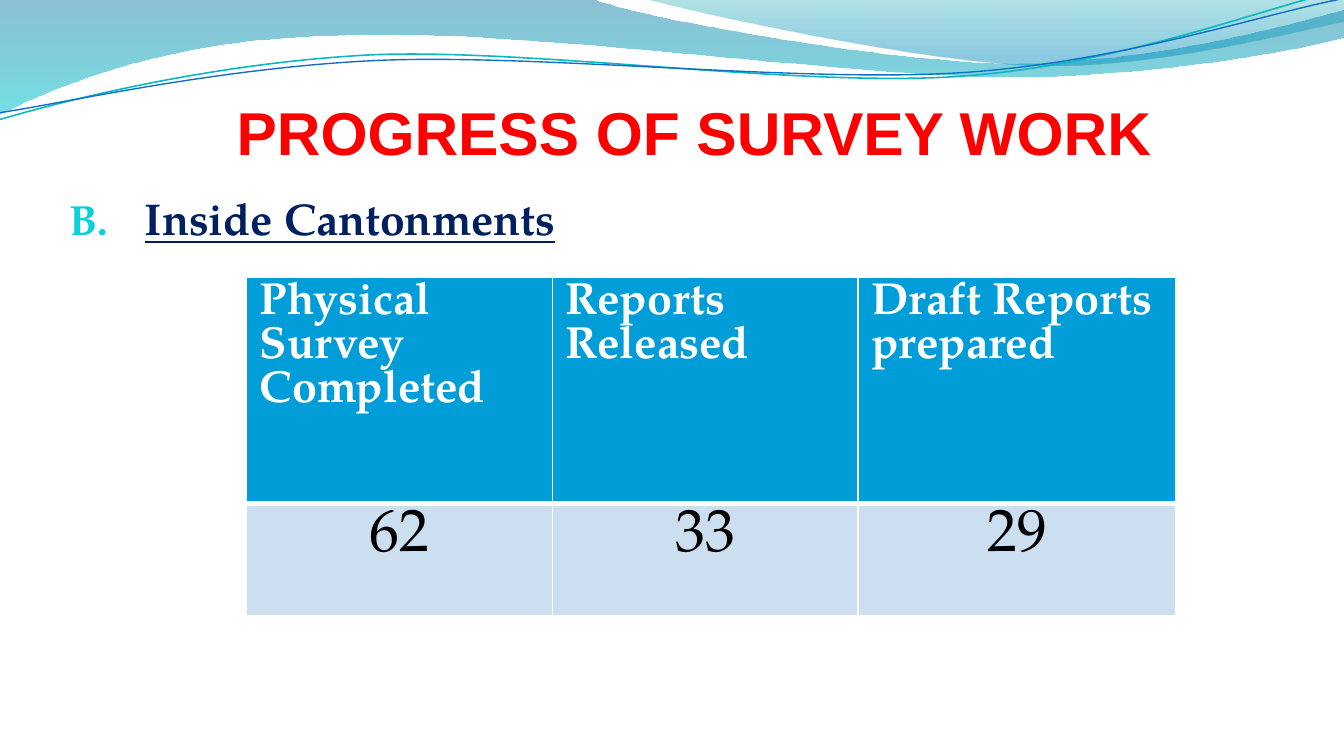
"""Build the survey progress slide with wave decoration and a results table."""
from lxml import etree
from pptx import Presentation
from pptx.dml.color import RGBColor
from pptx.enum.text import MSO_ANCHOR, PP_ALIGN
from pptx.oxml.ns import qn
from pptx.util import Cm, Pt

BOTTOM = MSO_ANCHOR.BOTTOM
LEFT, CENTER = PP_ALIGN.LEFT, PP_ALIGN.CENTER

WHITE = RGBColor(0xFF, 0xFF, 0xFF)
BLACK = RGBColor(0x00, 0x00, 0x00)
RED = RGBColor(0xFF, 0x00, 0x00)
NAVY = RGBColor(0x00, 0x20, 0x60)
HEADER_BLUE = RGBColor(0x00, 0x9D, 0xD9)
BODY_BLUE = RGBColor(0xCC, 0xDF, 0xF1)
WAVE_BLUE = RGBColor(0x00, 0x74, 0xA1)
WAVE_CYAN = RGBColor(0x00, 0xC6, 0xCF)
WAVE_TEAL = RGBColor(0x00, 0xA1, 0xA9)
WAVE_SKY = RGBColor(0x00, 0x8B, 0xBF)
LINE_TEAL = RGBColor(0x0A, 0xB8, 0xBF)
LINE_BLUE = RGBColor(0x0F, 0x6F, 0xC6)
BULLET_CYAN = RGBColor(0x0B, 0xD0, 0xD9)
SERIF = "TeX Gyre Pagella"


def add_wave(slide, start, segments, close):
    points = [(Cm(x), Cm(y)) for segment in segments for x, y in segment]
    builder = slide.shapes.build_freeform(Cm(start[0]), Cm(start[1]))
    builder.add_line_segments(points, close=close)
    shape = builder.convert_to_shape()
    shape.shadow.inherit = False
    straight_parts = iter(list(shape.element.iter(qn("a:lnTo"))))
    for segment in segments:
        parts = [next(straight_parts) for point in segment]
        if len(parts) == 3:
            curve = etree.Element(qn("a:cubicBezTo"))
            parts[0].addprevious(curve)
            for part in parts:
                curve.append(part[0])
                part.getparent().remove(part)
    return shape


def format_paragraph(paragraph, font_name, size, color, bold, alignment):
    paragraph.alignment = alignment
    paragraph.font.name = font_name
    paragraph.font.size = Pt(size)
    paragraph.font.color.rgb = color
    paragraph.font.bold = bold


presentation = Presentation()
presentation.slide_width, presentation.slide_height = Cm(25.4), Cm(14.29)
slide = presentation.slides.add_slide(presentation.slide_layouts[6])

filled_waves = [
    ((0, 0), [
        [(11.18, -0.03)],
        [(12.09, 0.33), (16.87, 1.19), (19.25, 1.19)],
        [(21.67, 1.19), (24.33, 0.48), (25.4, 0.18)],
        [(25.43, 0.69)],
        [(24.97, 0.84), (22.1, 1.45), (18.95, 1.45)],
        [(15.8, 1.42), (9.7, 0.53), (6.53, 0.66)],
        [(3.28, 0.69), (1.17, 1.57), (-0.03, 2.16)],
        [(0, 0)],
    ], [(0, WAVE_BLUE, 45), (1, WAVE_CYAN, 55)]),
    ((12.17, -0.03), [
        [(12.93, 0.2), (17.32, 1.17), (19.53, 1.24)],
        [(21.74, 1.32), (24.41, 0.61), (25.4, 0.41)],
        [(25.4, 0)],
        [(12.17, -0.03)],
    ], [(0, WAVE_TEAL, 30), (0.8, WAVE_SKY, 45)]),
]
for start, segments, stops in filled_waves:
    shape = add_wave(slide, start, segments, True)
    shape.line.fill.background()
    shape.fill.gradient()
    shape.fill.gradient_angle = 270
    for stop, (position, color, opacity) in zip(shape.fill.gradient_stops, stops):
        stop.position = position
        stop.color.rgb = color
    for element, (position, color, opacity) in zip(shape.element.iter(qn("a:srgbClr")), stops):
        etree.SubElement(element, qn("a:alpha"), val=str(opacity * 1000))

line_waves = [
    ((-0.04, 1.66), [
        [(1.19, 1.36), (4.02, 0.78), (7.05, 0.77)],
        [(10.07, 0.79), (15.01, 1.76), (18.06, 1.7)],
        [(21.14, 1.64), (23.88, 0.68), (25.39, 0.42)],
    ], LINE_TEAL, 0.85),
    ((-0.03, 1.53), [
        [(1.17, 1.41), (4.17, 0.87), (7.19, 0.88)],
        [(10.24, 0.9), (15.14, 1.69), (18.19, 1.63)],
        [(21.22, 1.57), (23.93, 0.78), (25.44, 0.57)],
    ], LINE_BLUE, 0.75),
]
for start, segments, color, width in line_waves:
    shape = add_wave(slide, start, segments, False)
    shape.rotation = 357.3
    shape.fill.background()
    shape.line.color.rgb = color
    shape.line.width = Pt(width)

title = slide.shapes.add_textbox(Cm(1.69), Cm(1.75), Cm(22.86), Cm(1.42)).text_frame
title.word_wrap = True
title.vertical_anchor = BOTTOM
title.margin_left = title.margin_right = title.margin_bottom = 0
title.text = "PROGRESS OF SURVEY WORK"
format_paragraph(title.paragraphs[0], "Arial", 32.4, RED, True, CENTER)

heading = slide.shapes.add_textbox(Cm(1.07), Cm(3.49), Cm(23.93), Cm(1.12)).text_frame
heading.word_wrap = True
heading.text = "Inside Cantonments"
paragraph = heading.paragraphs[0]
format_paragraph(paragraph, SERIF, 23.8, NAVY, True, LEFT)
paragraph.font.underline = True
paragraph.space_before = Pt(4.8)
properties = paragraph._p.get_or_add_pPr()
properties.set("marL", str(Cm(1.42)))
properties.set("indent", str(-Cm(1.42)))
bullet_color = etree.Element(qn("a:buClr"))
etree.SubElement(bullet_color, qn("a:srgbClr"), val=str(BULLET_CYAN))
bullet_size = etree.Element(qn("a:buSzPct"), val="95000")
bullet_number = etree.Element(qn("a:buAutoNum"), type="alphaUcPeriod", startAt="2")
default_font = properties.find(qn("a:defRPr"))
for element in (bullet_color, bullet_size, bullet_number):
    default_font.addprevious(element)

rows = [
    (("Physical Survey Completed", "Reports Released", "Draft Reports prepared"),
     4.27, HEADER_BLUE, (24, WHITE, True, LEFT), {"lnB": 3}),
    (("62", "33", "29"),
     2.13, BODY_BLUE, (32, BLACK, False, CENTER), {"lnT": 3}),
]
column_widths = (5.78, 5.78, 6.01)
table = slide.shapes.add_table(
    len(rows), len(column_widths), Cm(4.66), Cm(5.24), Cm(17.57), Cm(6.4)).table
for column, width in zip(table.columns, column_widths):
    column.width = Cm(width)
for row, (texts, height, fill_color, text_format, thick_borders) in zip(table.rows, rows):
    row.height = Cm(height)
    for cell, text in zip(row.cells, texts):
        cell.text = text
        cell.margin_left = cell.margin_right = Cm(0.25)
        cell.margin_top = cell.margin_bottom = Cm(0.1)
        format_paragraph(cell.text_frame.paragraphs[0], SERIF, *text_format)
        cell_properties = cell._tc.get_or_add_tcPr()
        for side in ("lnL", "lnR", "lnT", "lnB"):
            border = etree.SubElement(
                cell_properties, qn(f"a:{side}"), w=str(Pt(thick_borders.get(side, 1))))
            border_fill = etree.SubElement(border, qn("a:solidFill"))
            etree.SubElement(border_fill, qn("a:srgbClr"), val=str(WHITE))
        cell.fill.solid()
        cell.fill.fore_color.rgb = fill_color

presentation.save("out.pptx")
